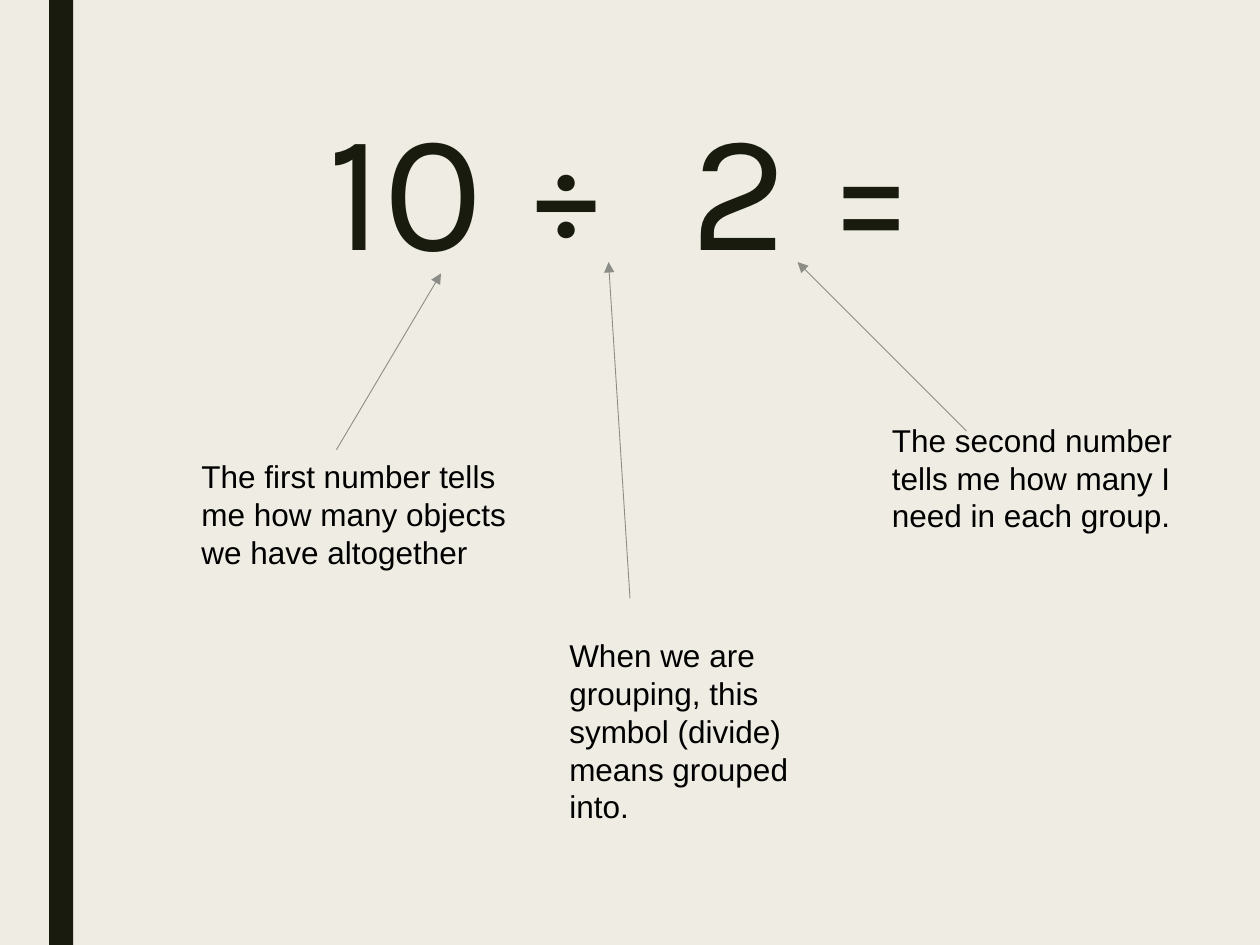
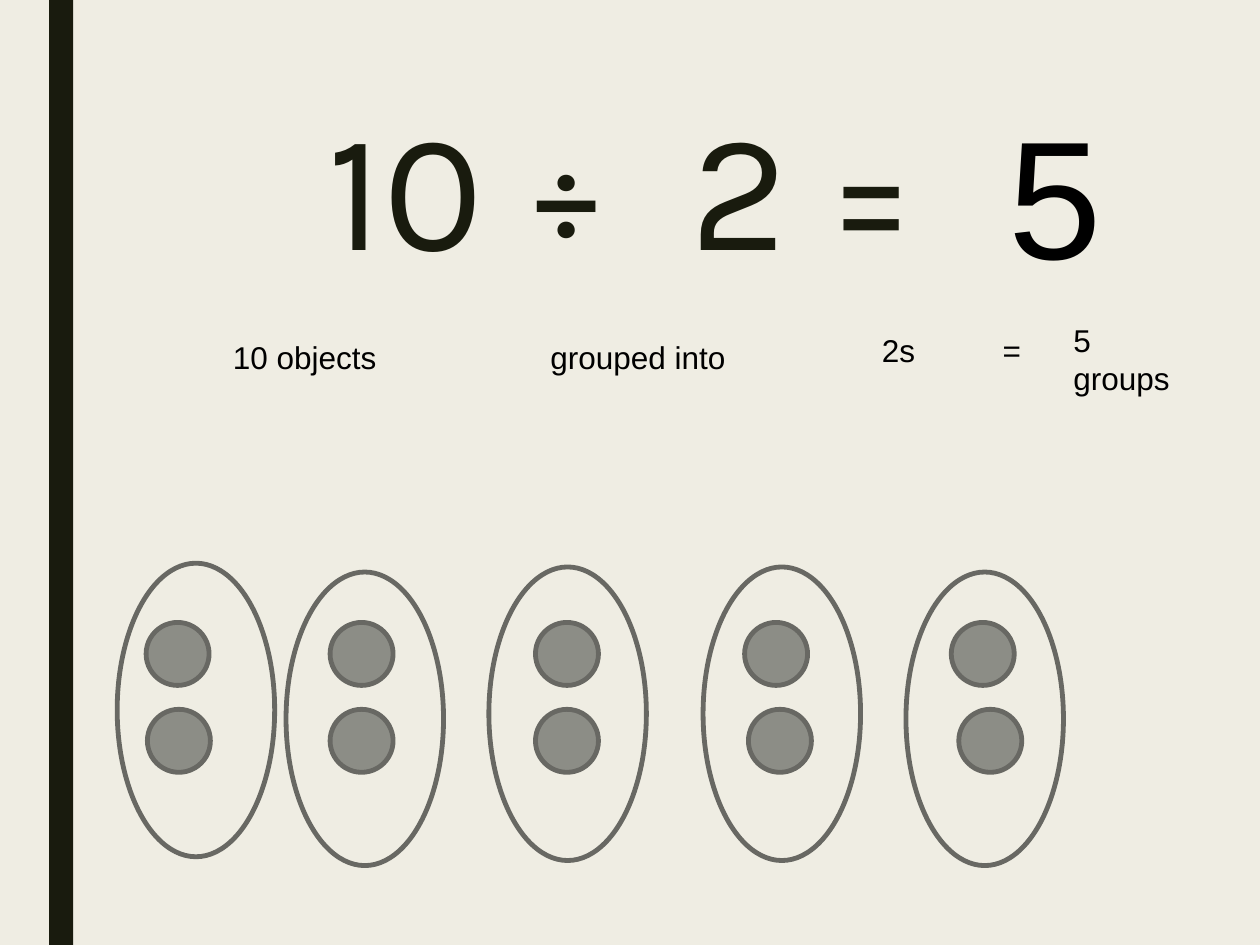
import pptx
import pptx.util
import pptx.dml.color
import pptx.enum.shapes
import pptx.enum.text
import pptx.oxml

Inches = pptx.util.Inches
Pt = pptx.util.Pt
Shape = pptx.enum.shapes.MSO_SHAPE

CREAM, DARK, BLACK = "EFEDE3", "191B0E", "000000"
GREY, EDGE = "8C8D86", "686863"


def paint(target, color):
    """Give a fill a solid colour."""
    target.solid()
    target.fore_color.rgb = pptx.dml.color.RGBColor.from_string(color)


def write(shape, text, size, font, color):
    """Put one run of text into a shape and let it wrap."""
    frame = shape.text_frame
    frame.word_wrap = True
    run = frame.paragraphs[0].add_run()
    run.text = text
    run.font.size = Pt(size)
    run.font.name = font
    paint(run.font.fill, color)


deck = pptx.Presentation()
deck.slide_width, deck.slide_height = Inches(10), Inches(7.5)
master = deck.slide_master
paint(master.background.fill, CREAM)

# Both slides show the same sum as their title
pages = []
for num in range(2):
    page = deck.slides.add_slide(deck.slide_layouts.get_by_name("Title Only"))
    title = page.shapes.title
    title.left, title.top = Inches(2.5), Inches(0.75)
    title.width, title.height = Inches(7.88), Inches(1.62)
    write(title, "10 ÷  2 =", 96, "Karla", DARK)
    title.text_frame.auto_size = pptx.enum.text.MSO_AUTO_SIZE.NONE
    title.text_frame.vertical_anchor = pptx.enum.text.MSO_ANCHOR.MIDDLE
    line = title.text_frame.paragraphs[0]
    line.alignment = pptx.enum.text.PP_ALIGN.LEFT
    line.line_spacing = 0.89
    pages.append(page)
parts, groups = pages

# The dark band belongs to the master, behind everything else
band = parts.shapes.add_shape(
    Shape.RECTANGLE, Inches(0.39), 0, Inches(0.19), deck.slide_height)
band.shadow.inherit = False
paint(band.fill, DARK)
band.line.fill.background()
master.element.cSld.spTree.insert(2, band.element)

# Text boxes: slide, left, top, width, height, size, text
notes = [
    (parts, 1.5, 3.58, 2.75, 1.01, 18,
     "The first number tells me how many objects we have altogether"),
    (parts, 6.98, 3.29, 2.75, 1.01, 18,
     "The second number tells me how many I need in each group."),
    (parts, 4.42, 5, 2.17, 1.62, 18,
     "When we are grouping, this symbol (divide) means grouped into."),
    (groups, 1.75, 2.63, 2.75, 0.4, 18, "10 objects"),
    (groups, 4.27, 2.63, 2.17, 0.4, 18, "grouped into"),
    (groups, 6.9, 2.58, 0.8, 0.4, 18, "2s"),
    (groups, 7.86, 2.58, 0.5, 0.4, 18, "="),
    (groups, 8.42, 2.5, 1, 0.71, 18, "5 groups"),
    (groups, 7.91, 0.68, 1, 1.72, 96, "5"),
]
for page, left, top, width, height, size, text in notes:
    box = page.shapes.add_textbox(
        Inches(left), Inches(top), Inches(width), Inches(height))
    write(box, text, size, "Arial", BLACK)
    box.text_frame.auto_size = pptx.enum.text.MSO_AUTO_SIZE.SHAPE_TO_FIT_TEXT

# Arrows from each note up to its part of the sum
for ends in [(2.67, 3.57, 3.5, 2.17), (7.67, 3.42, 6.33, 2.08),
             (5, 4.75, 4.83, 2.08)]:
    arrow = parts.shapes.add_connector(
        pptx.enum.shapes.MSO_CONNECTOR.STRAIGHT, *map(Inches, ends))
    paint(arrow.line.fill, GREY)
    arrow.line.width = Pt(0.5)
    props = arrow.element.spPr
    head = pptx.oxml.parse_xml(
        '<a:tailEnd xmlns:a="http://schemas.openxmlformats.org/drawingml/2006/main"'
        ' type="triangle"/>')
    arrow.line.fill  # the outline exists before the head is added
    props.ln.append(head)
    props.append(head.makeelement(head.tag.replace("tailEnd", "effectLst")))

# Five rings of two dots: ring left, ring top, upper dot left, lower dot left
rings = [
    (0.93, 4.47, 1.16, 1.17),
    (2.27, 4.54, 2.62, 2.62),
    (3.88, 4.5, 4.25, 4.25),
    (5.58, 4.5, 5.91, 5.94),
    (7.19, 4.54, 7.55, 7.61),
]
for left, top, upper, lower in rings:
    for x, y, width, height, fill in [
            (upper, 4.94, 0.5, 0.5, GREY),
            (lower, 5.63, 0.5, 0.5, GREY),
            (left, top, 1.25, 2.33, None)]:
        oval = groups.shapes.add_shape(
            Shape.OVAL, Inches(x), Inches(y), Inches(width), Inches(height))
        oval.shadow.inherit = False
        if fill:
            paint(oval.fill, fill)
        else:
            oval.fill.background()
        paint(oval.line.fill, EDGE)
        oval.line.width = Pt(2.75)

deck.save("out.pptx")
